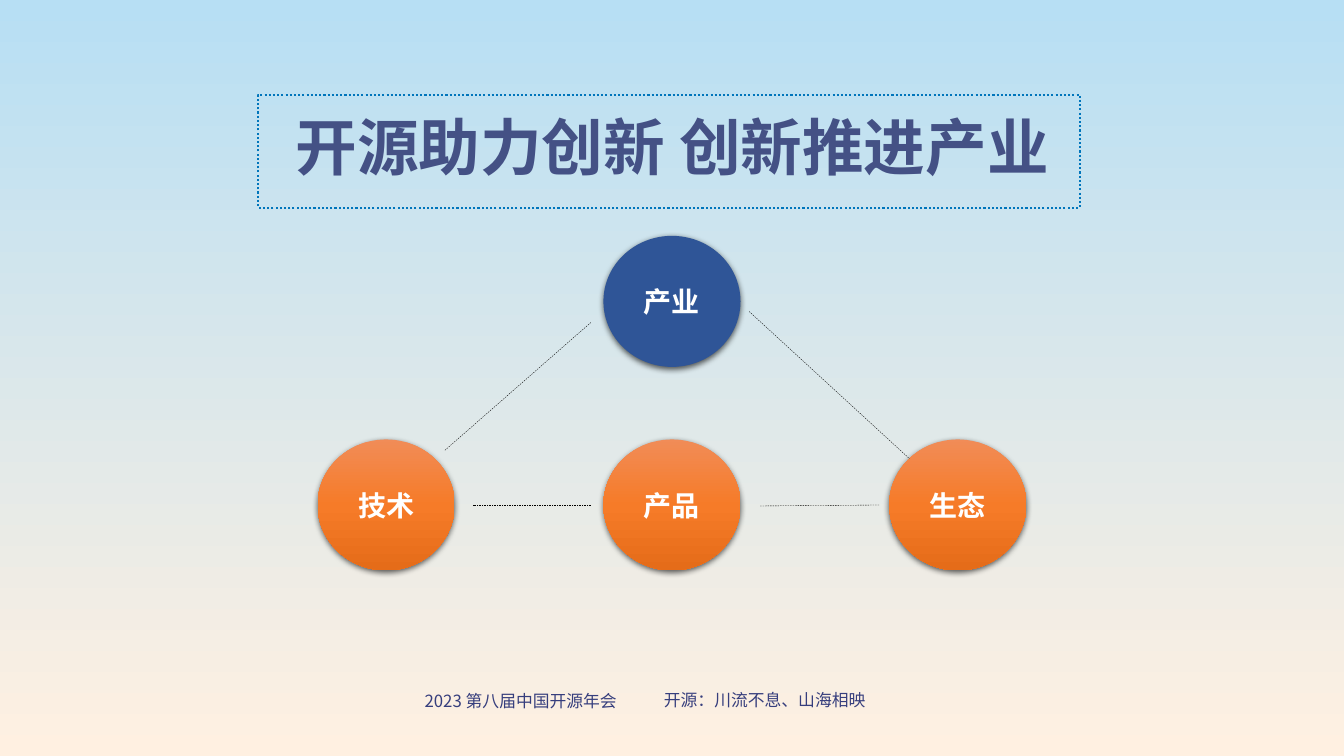
from copy import deepcopy

from lxml.etree import SubElement
from pptx import Presentation
from pptx.dml.color import RGBColor
from pptx.enum.dml import MSO_LINE
from pptx.enum.shapes import MSO_CONNECTOR, MSO_SHAPE
from pptx.enum.text import MSO_ANCHOR, PP_ALIGN
from pptx.oxml.ns import qn
from pptx.util import Inches, Pt

FONT = "Noto Sans CJK SC"
COLS, ROWS = 13.33, 7.5  # grid of one-inch cells
NAVY, ORANGES = "2F5597", ["F18C57", "F67B28", "E56C19"]


def rgb(code):
    return RGBColor.from_string(code)


def place(box, x, y, w, h):
    """Lengths in grid cells, offset from the corner of a region."""
    return [Inches(v) for v in (box[0] + x, box[1] + y, w, h)]


def set_gradient(fill, element, colors):
    """Fill from top to bottom with evenly spaced colours."""
    fill.gradient()
    fill.gradient_angle = 270
    stops = next(element.iter(qn("a:gsLst")))
    while len(stops) < len(colors):
        stops.append(deepcopy(stops[-1]))
    for i, (stop, color) in enumerate(zip(fill.gradient_stops, colors)):
        stop.color.rgb = rgb(color)
        stop.position = i / (len(colors) - 1)


def write(s, text, size, color, bold=False):
    tf = s.text_frame
    tf.word_wrap = True
    tf.vertical_anchor = MSO_ANCHOR.MIDDLE
    tf.text = text
    p = tf.paragraphs[0]
    p.alignment = PP_ALIGN.CENTER
    font = p.runs[0].font
    font.name, font.size, font.bold = FONT, Pt(size), bold
    font.color.rgb = rgb(color)
    SubElement(p.runs[0]._r.rPr, qn("a:ea"), typeface=FONT)
    return p


def add_shadow(s):
    effects = s._element.spPr.find(qn("a:effectLst"))
    shadow = SubElement(effects, qn("a:outerShdw"), blurRad=str(Pt(4.5)),
                        dist=str(Pt(1.5)), dir="5400000", rotWithShape="0")
    black = SubElement(shadow, qn("a:srgbClr"), val="000000")
    SubElement(black, qn("a:alpha"), val="63000")


# Footer
def add_footer(slide, box):
    for text, x, y, w in [("2023 第八届中国开源年会", 0, 0.01, 2.75),
                          ("开源：川流不息、山海相映", 2.59, 0, 2.41)]:
        s = slide.shapes.add_textbox(*place(box, x, y, w, 0.3))
        write(s, text, 12, "363E7D")


# Title in a dotted frame
def add_title(slide, box):
    frame = slide.shapes.add_shape(MSO_SHAPE.RECTANGLE, *place(box, 1.64, 0.17, 8.15, 1.12))
    frame.shadow.inherit = False
    frame.fill.background()
    frame.line.color.rgb = rgb("0075BB")
    frame.line.width = Pt(1.5)
    frame.line.dash_style = MSO_LINE.ROUND_DOT
    s = slide.shapes.add_textbox(*place(box, 0, 0, box[2], box[3]))
    write(s, "开源助力创新 创新推进产业", 44, "445185", True).line_spacing = 0.9


# Circles joined by dashed lines
def add_circle(slide, box, text, x, y, colors):
    s = slide.shapes.add_shape(MSO_SHAPE.OVAL, *place(box, x, y, 1.36, 1.3))
    s.shadow.inherit = False
    s.line.fill.background()
    if len(colors) == 1:
        s.fill.solid()
        s.fill.fore_color.rgb = rgb(colors[0])
    else:
        set_gradient(s.fill, s._element, colors)
    add_shadow(s)
    write(s, text, 20, "FFFFFF", True)


def add_diagram(slide, box):
    pitch = (box[2] - 1.36) / 2
    add_circle(slide, box, "产业", pitch, 0, [NAVY])
    for i, text in enumerate(["技术", "产品", "生态"]):
        add_circle(slide, box, text, i * pitch, box[3] - 1.3, ORANGES)
    for x1, y1, x2, y2 in [(2.71, 0.86, 1.26, 2.13), (2.71, 2.67, 1.54, 2.67),
                           (5.57, 2.67, 4.38, 2.68), (4.28, 0.75, 5.87, 2.21)]:
        c = slide.shapes.add_connector(MSO_CONNECTOR.STRAIGHT,
                                       *place(box, x1, y1, box[0] + x2, box[1] + y2))
        c.line.color.rgb = rgb("000000")
        c.line.width = Pt(0.25)
        c.line.dash_style = MSO_LINE.DASH
        SubElement(c._element.spPr, qn("a:effectLst"))


def main():
    prs = Presentation()
    prs.slide_width, prs.slide_height = Inches(COLS), Inches(ROWS)
    slide = prs.slides.add_slide(prs.slide_layouts[6])
    set_gradient(slide.background.fill, slide._element, ["B7DFF4", "FFF0E1"])
    add_footer(slide, (3.79, 6.79, 5, 0.31))
    add_title(slide, (0.92, 0.77, 11.5, 1.45))
    add_diagram(slide, (3.15, 2.34, 7.03, 3.32))
    prs.save("out.pptx")


if __name__ == "__main__":
    main()
